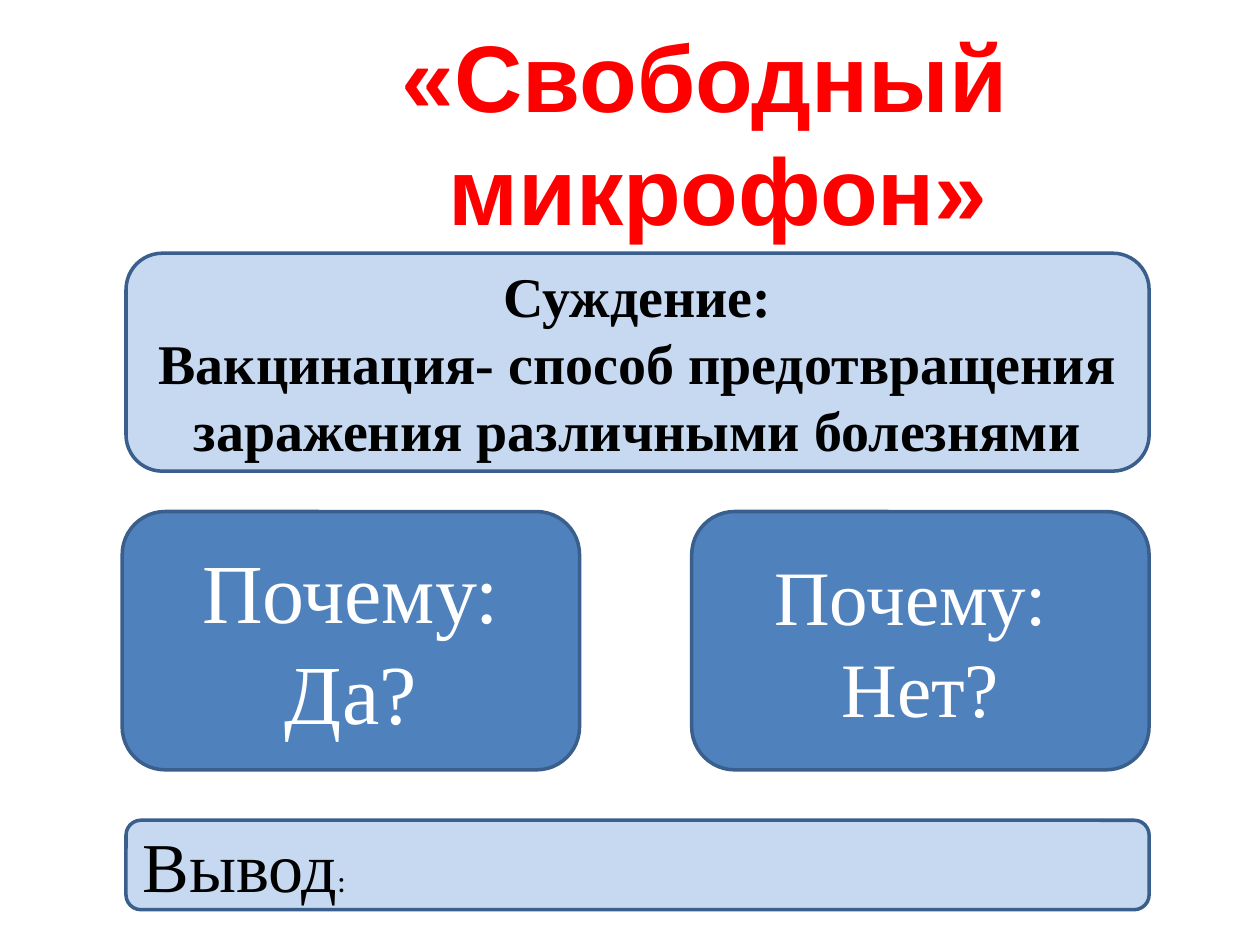
from pptx import Presentation
from pptx.dml.color import RGBColor
from pptx.enum.shapes import MSO_SHAPE
from pptx.enum.text import MSO_ANCHOR, MSO_AUTO_SIZE, PP_ALIGN
from pptx.util import Inches, Pt

ROUNDED = MSO_SHAPE.ROUNDED_RECTANGLE
CENTER, LEFT = PP_ALIGN.CENTER, PP_ALIGN.LEFT
MIDDLE = MSO_ANCHOR.MIDDLE
GROW = MSO_AUTO_SIZE.SHAPE_TO_FIT_TEXT

RED = RGBColor(0xFF, 0x00, 0x00)
BLACK = RGBColor(0x00, 0x00, 0x00)
WHITE = RGBColor(0xFF, 0xFF, 0xFF)
PALE_BLUE = RGBColor(0xC6, 0xD9, 0xF1)
BLUE = RGBColor(0x4F, 0x81, 0xBD)
BORDER = RGBColor(0x3A, 0x5F, 0x8C)

SERIF = "Times New Roman"


def set_font(font, name, size, color, bold=False):
    font.name = name
    font.size = Pt(size)
    font.bold = bold
    font.color.rgb = color


def add_title(s, lines):
    """Add the heading as one paragraph with line breaks."""
    box = s.shapes.add_textbox(Inches(1.61), Inches(0.09), Inches(7.97), Inches(1.92))
    tf = box.text_frame
    tf.word_wrap = True
    tf.auto_size = GROW
    p = tf.paragraphs[0]
    p.text = "\n".join(lines)
    p.alignment = CENTER
    set_font(p.font, "Arial", 54, RED, bold=True)
    for r in p.runs:
        set_font(r.font, "Arial", 54, RED, bold=True)


def add_panel(s, left, top, width, height, fill):
    """Add an empty rounded panel and return its text frame."""
    sp = s.shapes.add_shape(ROUNDED, Inches(left), Inches(top), Inches(width), Inches(height))
    sp.shadow.inherit = False
    sp.fill.solid()
    sp.fill.fore_color.rgb = fill
    sp.line.color.rgb = BORDER
    sp.line.width = Pt(2)
    tf = sp.text_frame
    tf.word_wrap = True
    tf.vertical_anchor = MIDDLE
    return tf


def write_lines(tf, lines, size, color, bold=False):
    """Write one centred paragraph for each line."""
    tf.text = "\n".join(lines)
    for p in tf.paragraphs:
        p.alignment = CENTER
        set_font(p.font, SERIF, size, color, bold)


def write_conclusion(tf):
    p = tf.paragraphs[0]
    p.alignment = LEFT
    for text, name, size in (("Вывод", SERIF, 40), (":", "Calibri", 18)):
        r = p.add_run()
        r.text = text
        set_font(r.font, name, size, BLACK)


def main():
    prs = Presentation()
    prs.slide_width, prs.slide_height = Inches(10), Inches(7.5)
    s = prs.slides.add_slide(prs.slide_layouts[6])

    add_title(s, ["«Свободный", " микрофон»"])

    statement = add_panel(s, 1, 2.01, 8.12, 1.73, PALE_BLUE)
    write_lines(
        statement,
        ["Суждение:", "Вакцинация- способ предотвращения заражения различными болезнями"],
        32, BLACK, bold=True,
    )

    questions = (
        (0.97, ["Почему:", "Да?"], 48),
        (5.49, ["Почему: ", "Нет?"], 44),
    )
    for left, lines, size in questions:
        write_lines(add_panel(s, left, 4.06, 3.63, 2.05, BLUE), lines, size, WHITE)

    write_conclusion(add_panel(s, 1, 6.51, 8.12, 0.71, PALE_BLUE))
    prs.save("out.pptx")


if __name__ == "__main__":
    main()
